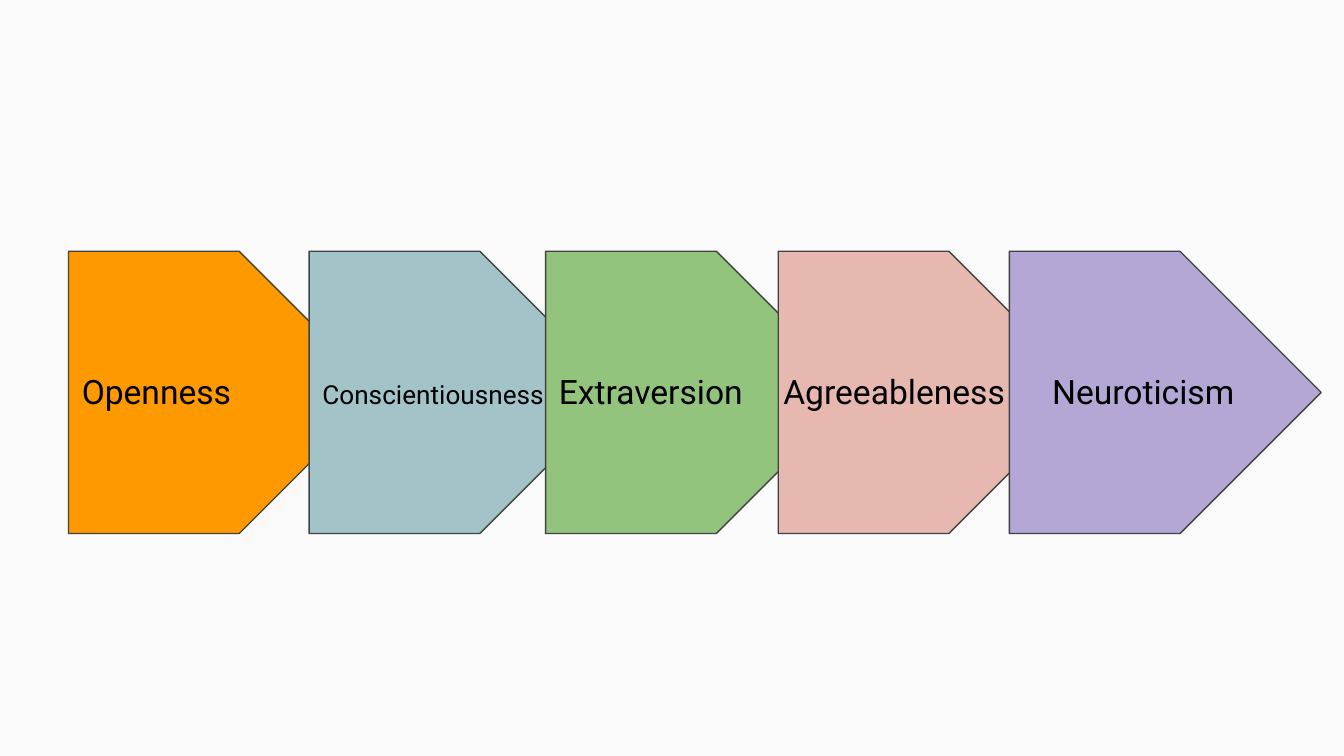
from pptx import Presentation
from pptx.dml.color import RGBColor
from pptx.enum.shapes import MSO_SHAPE
from pptx.enum.text import MSO_AUTO_SIZE
from pptx.util import Pt

BACK = RGBColor(0xFA, 0xFA, 0xFA)
EDGE = RGBColor(0x42, 0x42, 0x42)
INK = RGBColor(0, 0, 0)
ORANGE = RGBColor(0xFF, 0x99, 0x00)
TEAL = RGBColor(0xA2, 0xC4, 0xC9)
GREEN = RGBColor(0x93, 0xC4, 0x7D)
PINK = RGBColor(0xE6, 0xB8, 0xAF)
PURPLE = RGBColor(0xB4, 0xA7, 0xD6)

FONT = "Roboto"
SIZE = 18

# Trait, fill, arrow left, label left, label width, text size
TRAITS = [
    ("Openness", ORANGE, 36.72, 36.72, 135.36, SIZE),
    ("Conscientiousness", TEAL, 165.6, 165.6, 188.64, 14),
    ("Extraversion", GREEN, 292.32, 292.32, 135.36, SIZE),
    ("Agreeableness", PINK, 416.88, 412.56, 135.36, SIZE),
    ("Neuroticism", PURPLE, 540.72, 556.56, 135.36, SIZE),
]


def add_arrow(slide, left, fill):
    arrow = slide.shapes.add_shape(
        MSO_SHAPE.PENTAGON, Pt(left), Pt(134.64), Pt(167.04), Pt(151.2))
    arrow.adjustments[0] = 0.5
    arrow.shadow.inherit = False
    arrow.fill.solid()
    arrow.fill.fore_color.rgb = fill
    arrow.line.color.rgb = EDGE
    arrow.line.width = Pt(0.75)


def add_label(slide, text, left, width, size):
    box = slide.shapes.add_textbox(Pt(left), Pt(191.52), Pt(width), Pt(36.72))
    frame = box.text_frame
    frame.word_wrap = True
    frame.auto_size = MSO_AUTO_SIZE.SHAPE_TO_FIT_TEXT
    frame.margin_left = frame.margin_right = Pt(7.2)
    frame.margin_top = frame.margin_bottom = Pt(7.2)
    frame.text = text
    para = frame.paragraphs[0]
    # A full-size space keeps smaller text on the common baseline
    if size < SIZE:
        para.add_run().text = " "
    for run, points in zip(para.runs, (size, SIZE)):
        run.font.name = FONT
        run.font.size = Pt(points)
        run.font.color.rgb = INK


def main():
    deck = Presentation()
    deck.slide_width, deck.slide_height = Pt(720), Pt(405)
    slide = deck.slides.add_slide(deck.slide_layouts[6])
    slide.background.fill.solid()
    slide.background.fill.fore_color.rgb = BACK

    # Overlapping arrows, each in front of the one before
    for _, fill, left, *_ in TRAITS:
        add_arrow(slide, left, fill)

    # Labels above all arrows, from the last trait to the first
    for text, _, _, left, width, size in reversed(TRAITS):
        add_label(slide, text, left, width, size)

    deck.save("out.pptx")


if __name__ == "__main__":
    main()
